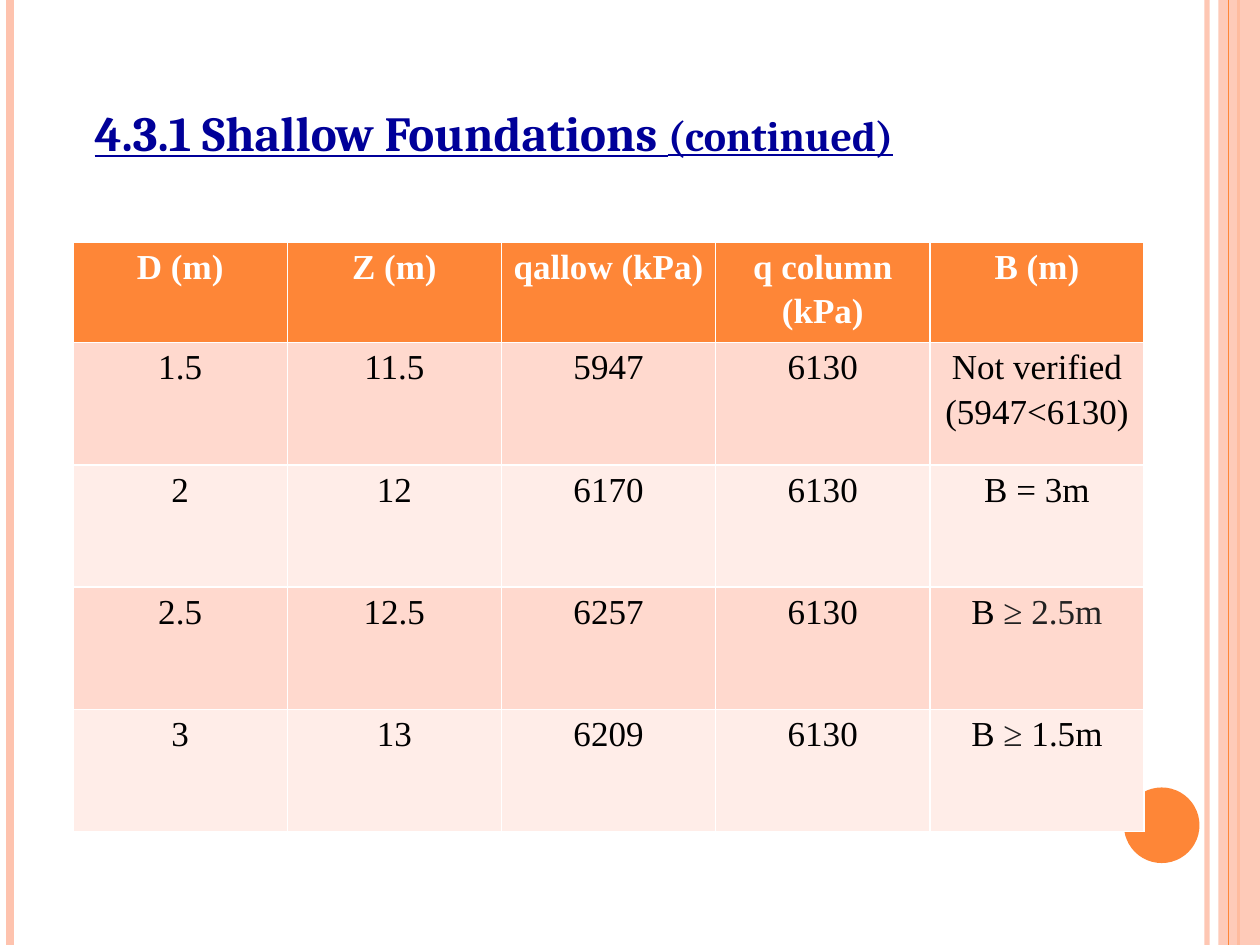
from lxml import etree
from pptx import Presentation
from pptx.dml.color import RGBColor
from pptx.enum.shapes import MSO_CONNECTOR, MSO_SHAPE
from pptx.enum.text import MSO_ANCHOR, PP_ALIGN
from pptx.oxml.ns import qn
from pptx.util import Inches, Pt

LEFT, CENTER = PP_ALIGN.LEFT, PP_ALIGN.CENTER
TOP = MSO_ANCHOR.TOP
STRAIGHT = MSO_CONNECTOR.STRAIGHT
RECT, OVAL = MSO_SHAPE.RECTANGLE, MSO_SHAPE.OVAL

ORANGE, PEACH, WHITE, BLACK, GREY = "FE8637", "FEC3AE", "FFFFFF", "000000", "222222"
BANDS = ["FFD9CE", "FFEDE8"]
TITLE = [("4.3.1 Shallow Foundations ", 28), ("(continued)", 24)]
HEADER = ["D (m)", "Z (m)", "qallow (kPa)", "q column (kPa)", "B (m)"]
ROWS = [
    ["1.5", "11.5", "5947", "6130", "Not verified (5947<6130)"],
    ["2", "12", "6170", "6130", "B = 3m"],
    ["2.5", "12.5", "6257", "6130", [("B ", BLACK), ("≥ 2.5m", GREY)]],
    ["3", "13", "6209", "6130", [("B ", BLACK), ("≥", GREY), (" 1.5m", BLACK)]],
]
STRIPES_BELOW = [(9.58, PEACH, 3, 93), (0.08, PEACH, 4.5, 100), (9.83, ORANGE, 1.5, 100)]
STRIPES_ABOVE = [(9.75, ORANGE, 0.75, 100)]
COL_W, HEAD_H, ROW_H = 1.7, 0.8, 0.97


def color(value):
    """Turn a hex string into a colour."""
    return RGBColor.from_string(value)


def set_alpha(shape, percent):
    """Make the first colour of a shape partly transparent."""
    clr = shape._element.spPr.find(".//" + qn("a:srgbClr"))
    etree.SubElement(clr, qn("a:alpha"), val=str(percent * 1000))


def add_stripes(s, stripes):
    """Draw full-height vertical lines."""
    for x, hue, width, alpha in stripes:
        line = s.shapes.add_connector(STRAIGHT, Inches(x), 0, Inches(x), Inches(7.5))
        line.line.color.rgb = color(hue)
        line.line.width = Pt(width)
        set_alpha(line, alpha)
        etree.SubElement(line._element.spPr, qn("a:effectLst"))


def add_plain(s, kind, box, hue, alpha=100):
    """Draw a filled shape with no outline."""
    shape = s.shapes.add_shape(kind, *map(Inches, box))
    shape.shadow.inherit = False
    shape.fill.solid()
    shape.fill.fore_color.rgb = color(hue)
    shape.line.fill.background()
    set_alpha(shape, alpha)


def add_run(p, text, hue, **formats):
    """Add a run and set its font from the given formats."""
    r = p.add_run()
    r.text = text
    r.font.color.rgb = color(hue)
    for name, value in formats.items():
        setattr(r.font, name, value)


def add_title(s):
    """Place the title text in the title placeholder."""
    title = s.shapes.title
    title.left, title.top, title.width, title.height = map(Inches, (0.65, 0.76, 8.27, 0.57))
    tf = title.text_frame
    tf.word_wrap = True
    tf.vertical_anchor = TOP
    p = tf.paragraphs[0]
    p.alignment = LEFT
    for text, size in TITLE:
        add_run(p, text, "000099", name="Cambria", size=Pt(size), bold=True, underline=True)


def add_results(s):
    """Build the table of foundation results."""
    rows = [HEADER] + ROWS
    height = HEAD_H + ROW_H * len(ROWS)
    box = map(Inches, (0.58, 1.92, COL_W * len(HEADER), height))
    table = s.shapes.add_table(len(rows), len(HEADER), *box).table
    for column in table.columns:
        column.width = Inches(COL_W)
    for i, row in enumerate(rows):
        head = i == 0
        table.rows[i].height = Inches(HEAD_H if head else ROW_H)
        for j, content in enumerate(row):
            cell = table.cell(i, j)
            cell.fill.solid()
            cell.fill.fore_color.rgb = color(ORANGE if head else BANDS[(i - 1) % 2])
            cell.margin_left = cell.margin_right = Inches(0.07)
            cell.margin_top = cell.margin_bottom = 0
            p = cell.text_frame.paragraphs[0]
            p.alignment, p.line_spacing = CENTER, 1.15
            runs = [(content, WHITE if head else BLACK)] if isinstance(content, str) else content
            for text, hue in runs:
                add_run(p, text, hue, name="Times New Roman", size=Pt(20), bold=head)


def main():
    """Build and save the slide."""
    prs = Presentation()
    prs.slide_width, prs.slide_height = Inches(10), Inches(7.5)
    s = prs.slides.add_slide(prs.slide_layouts[5])
    add_stripes(s, STRIPES_BELOW)
    add_plain(s, RECT, (9.67, 0, 0.33, 7.5), PEACH, 87)
    add_stripes(s, STRIPES_ABOVE)
    add_plain(s, OVAL, (8.92, 6.25, 0.6, 0.6), ORANGE)
    add_results(s)
    add_title(s)
    prs.save("out.pptx")


if __name__ == "__main__":
    main()
